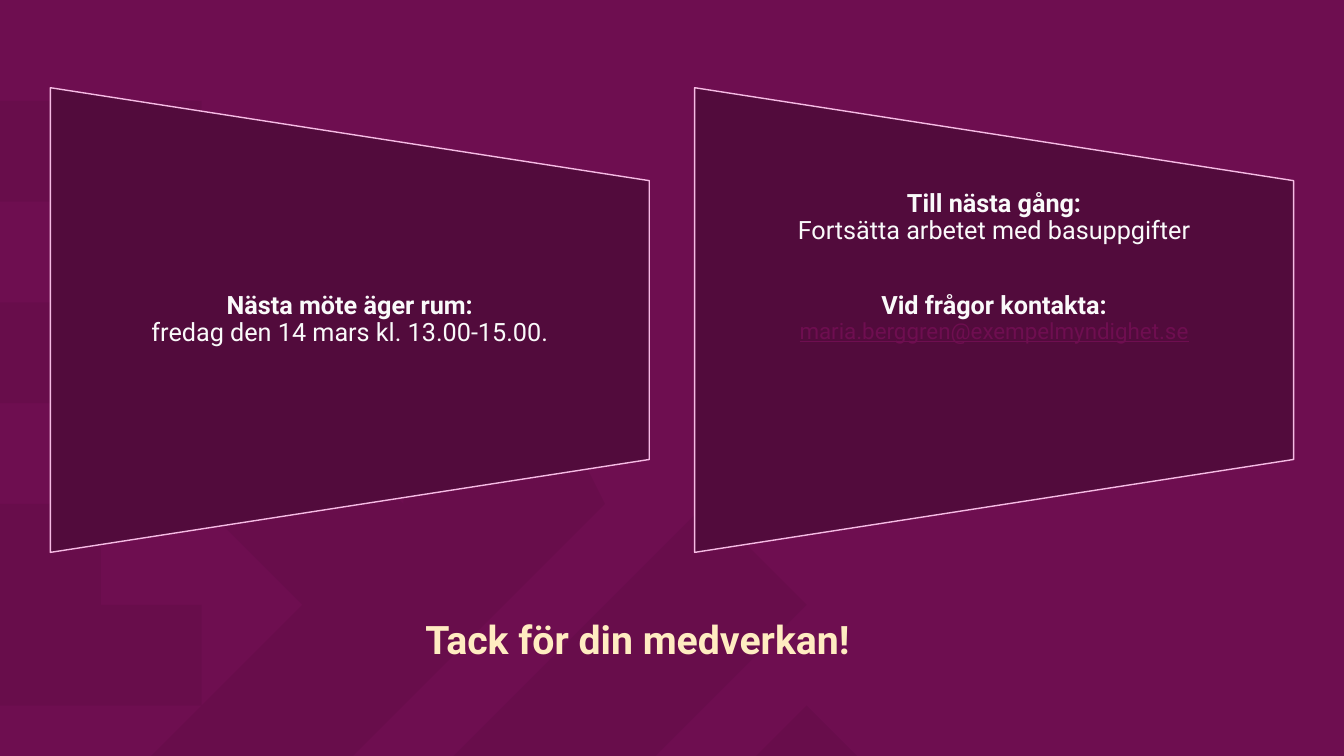
from lxml import etree
from pptx import Presentation
from pptx import util as u
from pptx.dml.color import RGBColor
from pptx.enum import shapes, text
from pptx.oxml.ns import qn

COLORS = {
    "plum": "6E0E50",
    "shade": "370728",
    "panel": "520B3C",
    "outline": "F6BBE4",
    "white": "FAFAFA",
    "cream": "FFECC1",
}

# Background bands: a pair is a corner, six numbers are a curve
BANDS = [
    [(8.31, 6.6), (9.1, 7.5), (7.39, 7.5)],
    [(6.77, 5.14), (7.65, 6.01), (6.16, 7.5), (4.43, 7.5)],
    [(0, 1.01), (0.58, 1.04), (2.03, 1.18, 3.44, 1.8, 4.54, 2.91),
     (6.19, 4.55), (3.24, 7.5), (1.48, 7.5), (1.51, 7.47), (0.74, 6.71),
     (0.59, 6.55, 0.4, 6.45, 0.2, 6.42), (0, 6.4), (0, 5.18), (0.02, 5.18),
     (0.6, 5.19, 1.18, 5.42, 1.62, 5.87), (2.39, 6.63), (3.01, 6.01),
     (2.24, 5.25), (1.75, 4.76, 1.18, 4.48, 0.59, 4.37), (0, 4.31),
     (0, 3.08), (0.4, 3.1), (1.38, 3.2, 2.33, 3.62, 3.08, 4.37),
     (3.85, 5.14), (4.47, 4.51), (3.7, 3.75),
     (2.84, 2.87, 1.71, 2.34, 0.53, 2.22), (0, 2.21)],
]


def color(name):
    return RGBColor.from_string(COLORS[name])


def flatten(band, steps=16):
    """Turn corners and cubic curves into a list of points."""
    points = []
    for part in band:
        if len(part) == 2:
            points.append(part)
            continue
        start, first, second, end = points[-1], part[:2], part[2:4], part[4:]
        for step in range(1, steps + 1):
            t = step / steps
            points.append(tuple(
                (1 - t) ** 3 * a + 3 * (1 - t) ** 2 * t * b
                + 3 * (1 - t) * t ** 2 * c + t ** 3 * d
                for a, b, c, d in zip(start, first, second, end)))
    return points


class SlideBuilder:
    font = "Roboto"

    def __init__(self, page):
        self.page = page

    def background(self, name):
        self.page.background.fill.solid()
        self.page.background.fill.fore_color.rgb = color(name)

    def bands(self, bands, name, opacity):
        outlines = [flatten(band) for band in bands]
        builder = self.page.shapes.build_freeform(*outlines[0][0], scale=u.Inches(1))
        for number, points in enumerate(outlines):
            if number:
                builder.move_to(*points[0])
            builder.add_line_segments(points[1:], close=True)
        shape = builder.convert_to_shape()
        shape.shadow.inherit = False
        shape.line.fill.background()
        shape.fill.solid()
        shape.fill.fore_color.rgb = color(name)
        tint = shape.fill._xPr.find(".//" + qn("a:srgbClr"))
        etree.SubElement(tint, qn("a:alpha")).set("val", str(opacity * 1000))

    def panel(self, left, top, width, height):
        # The preset is upright, so its sides swap when turned
        shape = self.page.shapes.add_shape(
            shapes.MSO_SHAPE.FLOWCHART_MANUAL_OPERATION,
            u.Inches(left + (width - height) / 2),
            u.Inches(top + (height - width) / 2),
            u.Inches(height), u.Inches(width))
        shape.rotation = 270
        shape.shadow.inherit = False
        shape.fill.solid()
        shape.fill.fore_color.rgb = color("panel")
        shape.line.color.rgb = color("outline")
        shape.line.width = u.Pt(1)

    def text_box(self, left, top, width, height):
        box = self.page.shapes.add_textbox(
            u.Inches(left), u.Inches(top), u.Inches(width), u.Inches(height))
        box.text_frame.word_wrap = True
        return box.text_frame

    def style(self, span, size, name, bold):
        span.font.name = self.font
        span.font.size = u.Pt(size)
        span.font.color.rgb = color(name)
        span.font.bold = bold

    def message(self, area, entries, anchor, top_inset=0):
        frame = self.text_box(*area)
        frame.vertical_anchor = anchor
        frame.margin_left = frame.margin_right = u.Inches(0.12)
        frame.margin_top, frame.margin_bottom = u.Inches(top_inset), 0
        frame.text = "\n".join(f"{label}\v{detail}" for label, detail in entries)
        for number, para in enumerate(frame.paragraphs):
            para.alignment = text.PP_ALIGN.CENTER
            para.line_spacing = 0.9
            para.space_before = u.Pt(34 if number else 0)
            label, detail = para.runs
            self.style(label, 18, "white", True)
            if "@" in detail.text:
                self.style(detail, 16, "plum", False)
                detail.font.underline = True
            else:
                self.style(detail, 18, "white", False)

    def closing(self, words, area):
        frame = self.text_box(*area)
        frame.auto_size = text.MSO_AUTO_SIZE.SHAPE_TO_FIT_TEXT
        frame.text = words
        self.style(frame.paragraphs[0].runs[0], 28, "cream", True)


def main():
    deck = Presentation()
    deck.slide_width, deck.slide_height = u.Inches(13.33), u.Inches(7.5)
    slide = SlideBuilder(deck.slides.add_slide(deck.slide_layouts[6]))

    # Backdrop
    slide.background("plum")
    slide.bands(BANDS, "shade", opacity=10)

    # Two panels with their messages
    anchors = text.MSO_ANCHOR
    messages = [
        (0.5, anchors.MIDDLE, 0,
         [("Nästa möte äger rum:", "fredag den 14 mars kl. 13.00-15.00.")]),
        (6.89, anchors.TOP, 0.1,
         [("Till nästa gång:", "Fortsätta arbetet med basuppgifter"),
          ("Vid frågor kontakta:", "maria.berggren@exempelmyndighet.se")]),
    ]
    for left, anchor, inset, entries in messages:
        slide.panel(left, 0.87, 5.94, 4.61)
        slide.message((left, 1.79, 5.94, 2.77), entries, anchor, inset)

    # Closing words
    slide.closing("Tack för din medverkan!", (4.12, 6.06, 5.1, 0.57))

    deck.save("out.pptx")


if __name__ == "__main__":
    main()
